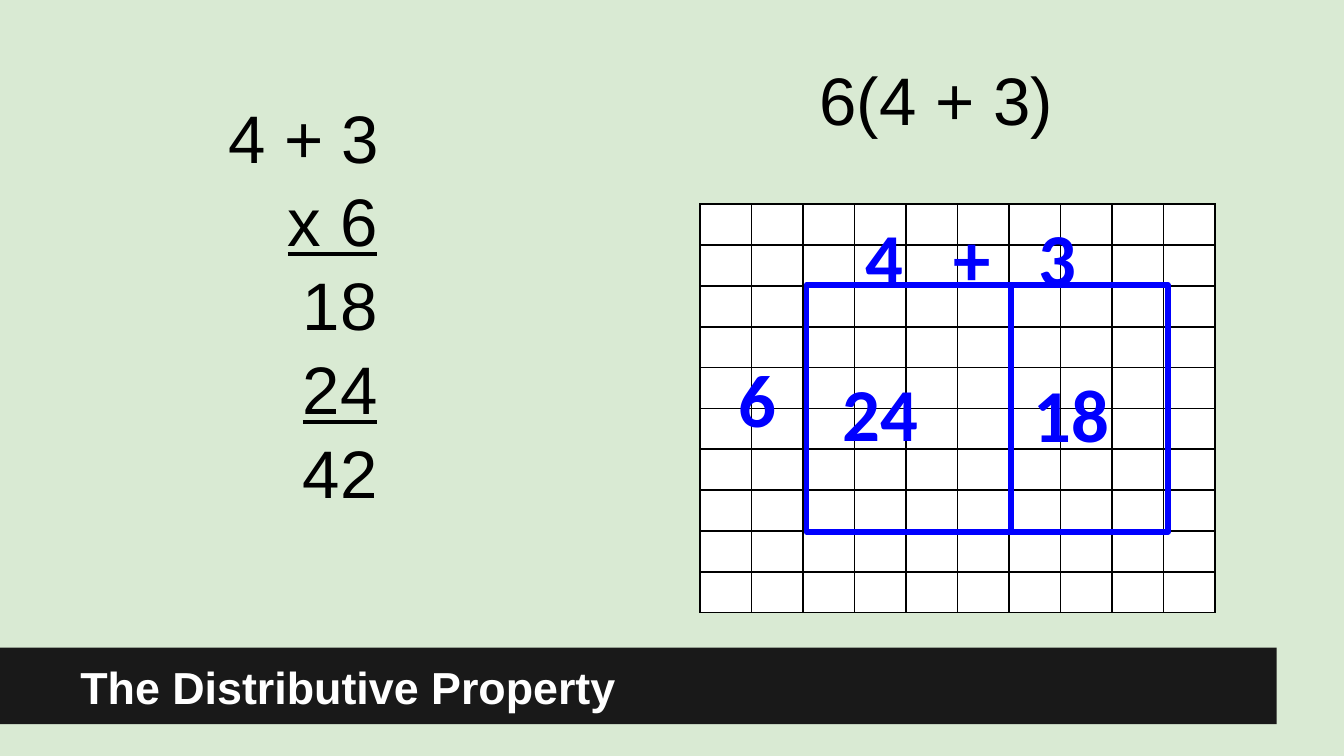
from dataclasses import dataclass

from lxml.etree import SubElement
from pptx import Presentation
from pptx.dml.color import RGBColor
from pptx.enum.shapes import MSO_CONNECTOR as Connector
from pptx.enum.shapes import MSO_SHAPE as Shape
from pptx.enum.text import MSO_ANCHOR as Anchor
from pptx.oxml.ns import qn
from pptx.slide import Slide
from pptx.util import Pt

GREEN = RGBColor(0xD9, 0xEA, 0xD3)
CHARCOAL = RGBColor(0x19, 0x19, 0x19)
WHITE = RGBColor(0xFF, 0xFF, 0xFF)
BLACK = RGBColor(0, 0, 0)
BLUE = RGBColor(0, 0, 0xFF)

GRID_SIZE = 10
GRID_LEFT, GRID_TOP = 375, 109.4
CELL_WIDTH, CELL_HEIGHT = 27.6, 21.9
INSET = 7.2

AREA_LEFT, AREA_TOP, AREA_WIDTH, AREA_HEIGHT = 432, 152.6, 193.7, 132.5
SPLIT_X = 541.5

BLUE_STYLE = {"name": "Calibri", "size": Pt(40), "bold": True}
MATH_STYLE = {"name": "Arial", "size": Pt(36), "bold": False}
TITLE_STYLE = {"name": "Arial", "size": Pt(24), "bold": True}


@dataclass
class Line:
    text: str
    underline: bool = False


@dataclass
class Label:
    left: float
    top: float
    width: float
    height: float
    lines: list[Line]
    style: dict
    color: RGBColor
    anchor: Anchor = Anchor.MIDDLE
    spacing: float = 1.0
    tab: float = 0
    tab_align: str = "l"


def number(left: float, top: float, width: float, height: float, text: str, tab: float = 0) -> Label:
    """Describe a blue number of the area model."""
    return Label(left, top, width, height, [Line(text)], BLUE_STYLE, BLUE, tab=tab)


def math(left: float, top: float, width: float, height: float, lines: list[Line], tab: float = 0) -> Label:
    """Describe black working whose tabbed lines end at a right tab."""
    return Label(left, top, width, height, lines, MATH_STYLE, BLACK,
                 Anchor.TOP, 1.04, tab, "r")


NUMBERS_ABOVE = [
    number(456.5, 111.4, 120, 52, "4\t+", tab=47.4),
    number(388.8, 192, 36, 42, "6"),
    number(549.4, 111.4, 44.6, 52, "3"),
]
NUMBERS_INSIDE = [
    number(444.2, 189.2, 92, 62.6, "24"),
    number(546.5, 182.7, 80, 77, "18"),
]
WORKING = math(115.2, 42.5, 238, 74, [
    Line("4 + 3"),
    Line("\tx 6", underline=True),
    Line("\t18"),
    Line("\t24", underline=True),
    Line("\t42"),
], tab=80)
TITLE = Label(36, 347.5, 648, 41, [Line("The Distributive Property")], TITLE_STYLE, WHITE)
EXPRESSION = math(432, 22.2, 259, 67, [Line("6(4 + 3)")])


def draw_label(slide: Slide, label: Label) -> None:
    box = slide.shapes.add_textbox(
        Pt(label.left), Pt(label.top), Pt(label.width), Pt(label.height))
    frame = box.text_frame
    frame.word_wrap = True
    frame.vertical_anchor = label.anchor
    for side in ("left", "right", "top", "bottom"):
        setattr(frame, f"margin_{side}", Pt(INSET))
    for index, line in enumerate(label.lines):
        para = frame.add_paragraph() if index else frame.paragraphs[0]
        para.line_spacing = label.spacing
        if label.tab:
            stops = SubElement(para._p.get_or_add_pPr(), qn("a:tabLst"))
            SubElement(stops, qn("a:tab"), pos=str(Pt(label.tab)), algn=label.tab_align)
        span = para.add_run()
        span.text = line.text
        for name, value in {**label.style, "underline": line.underline}.items():
            setattr(span.font, name, value)
        span.font.color.rgb = label.color


def draw_title_bar(slide: Slide) -> None:
    bar = slide.shapes.add_shape(Shape.RECTANGLE, Pt(0), Pt(347), Pt(684), Pt(41))
    bar.shadow.inherit = False
    bar.fill.solid()
    bar.fill.fore_color.rgb = CHARCOAL
    bar.line.fill.background()


def draw_grid(slide: Slide) -> None:
    table = slide.shapes.add_table(
        GRID_SIZE, GRID_SIZE, Pt(GRID_LEFT), Pt(GRID_TOP),
        Pt(GRID_SIZE * CELL_WIDTH), Pt(GRID_SIZE * CELL_HEIGHT)).table
    table.first_row = table.horz_banding = False
    for column in table.columns:
        column.width = Pt(CELL_WIDTH)
    for row in table.rows:
        row.height = Pt(CELL_HEIGHT)
    for cell in table.iter_cells():
        cell.margin_top = cell.margin_bottom = Pt(0)
        # Small empty text keeps the rows from growing
        cell.text_frame.paragraphs[0]._p.get_or_add_endParaRPr().set("sz", "800")
        properties = cell._tc.get_or_add_tcPr()
        for side in ("lnL", "lnR", "lnT", "lnB"):
            border = SubElement(properties, qn(f"a:{side}"), w=str(Pt(1)))
            paint = SubElement(border, qn("a:solidFill"))
            SubElement(paint, qn("a:srgbClr"), val=str(BLACK))
        cell.fill.solid()
        cell.fill.fore_color.rgb = WHITE


def draw_area_outline(slide: Slide) -> None:
    outline = slide.shapes.add_shape(
        Shape.RECTANGLE, Pt(AREA_LEFT), Pt(AREA_TOP), Pt(AREA_WIDTH), Pt(AREA_HEIGHT))
    outline.shadow.inherit = False
    outline.fill.background()
    outline.line.color.rgb = BLUE
    outline.line.width = Pt(3)


def draw_area_split(slide: Slide) -> None:
    split = slide.shapes.add_connector(
        Connector.STRAIGHT, Pt(SPLIT_X), Pt(AREA_TOP), Pt(SPLIT_X), Pt(AREA_TOP + AREA_HEIGHT))
    split.line.color.rgb = BLUE
    split.line.width = Pt(3)
    SubElement(split._element.spPr, qn("a:effectLst"))


def main() -> None:
    deck = Presentation()
    deck.slide_width, deck.slide_height = Pt(720), Pt(405)
    slide = deck.slides.add_slide(deck.slide_layouts[6])
    slide.background.fill.solid()
    slide.background.fill.fore_color.rgb = GREEN

    draw_title_bar(slide)
    draw_grid(slide)
    draw_area_outline(slide)
    for label in NUMBERS_ABOVE:
        draw_label(slide, label)
    draw_area_split(slide)
    for label in [*NUMBERS_INSIDE, WORKING, TITLE, EXPRESSION]:
        draw_label(slide, label)
    deck.save("out.pptx")


if __name__ == "__main__":
    main()
